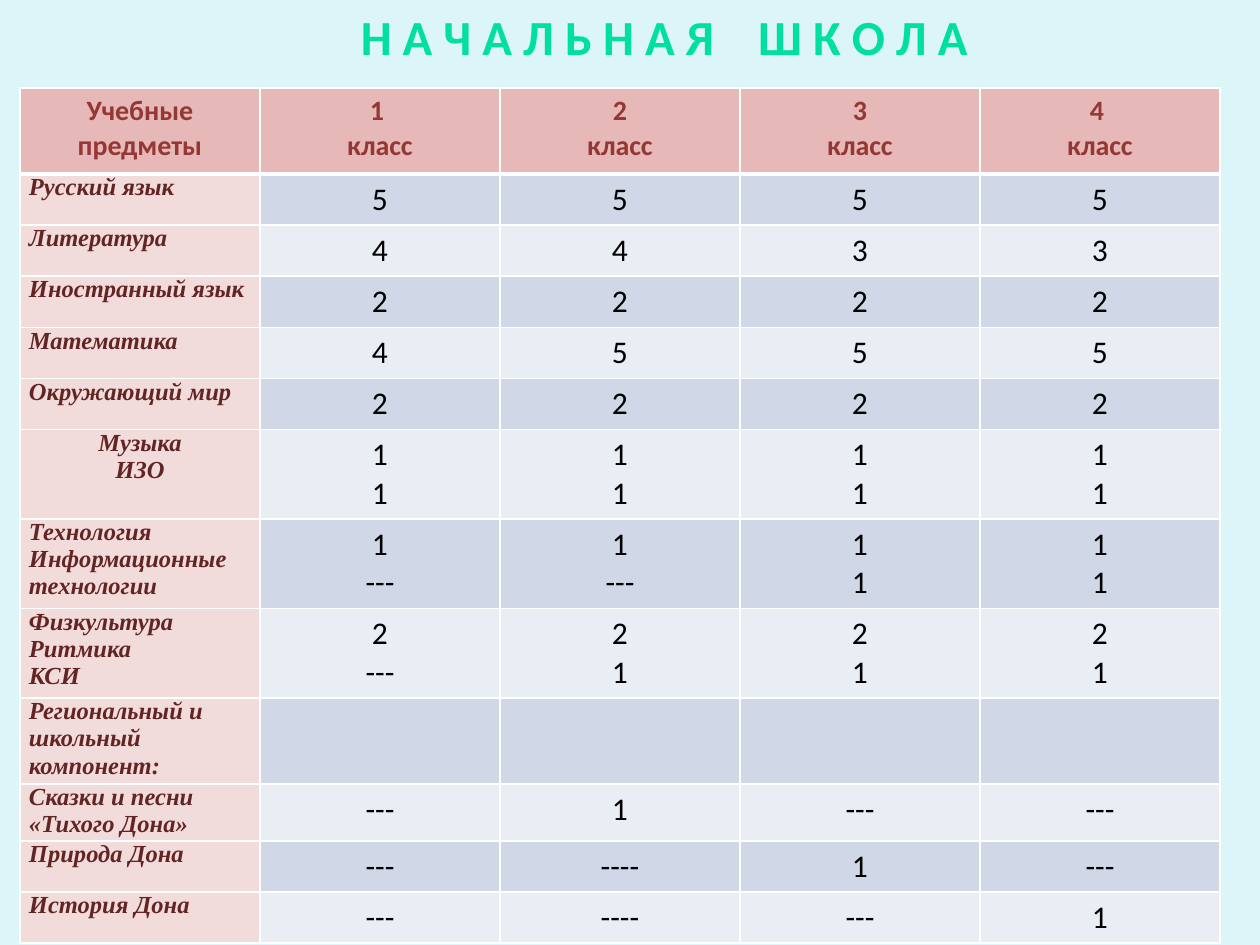
import pptx
import pptx.util
import pptx.dml.color
import pptx.enum.text
import pptx.oxml
import pptx.oxml.ns

RGB = pptx.dml.color.RGBColor
ALIGN = pptx.enum.text.PP_ALIGN
ANCHOR = pptx.enum.text.MSO_ANCHOR

BACKGROUND = RGB(0xDB, 0xF5, 0xF9)
TITLE_GREEN = RGB(0x00, 0xDF, 0xA2)
HEADER_FILL = RGB(0xE6, 0xB9, 0xB8)
HEADER_TEXT = RGB(0x95, 0x37, 0x35)
SUBJECT_FILL = RGB(0xF2, 0xDC, 0xDB)
SUBJECT_TEXT = RGB(0x63, 0x25, 0x23)
BANDS = RGB(0xD0, 0xD8, 0xE8), RGB(0xE9, 0xED, 0xF4)
BLACK = RGB(0, 0, 0)
WHITE = RGB(0xFF, 0xFF, 0xFF)

TITLE = "Н А Ч А Л Ь Н А Я    Ш К О Л А"
HEADER = ["Учебные предметы", "1 \nкласс", "2\nкласс", "3\nкласс", "4 \nкласс"]
# Row height in px, subject, hours in each of the four classes
SUBJECTS = [
    (49, "Русский язык", ["5", "5", "5", "5"]),
    (49, "Литература", ["4", "4", "3", "3"]),
    (49, "Иностранный язык", ["2", "2", "2", "2"]),
    (49, "Математика", ["4", "5", "5", "5"]),
    (49, "Окружающий мир", ["2", "2", "2", "2"]),
    (57, "Музыка\nИЗО", ["1\n1", "1\n1", "1\n1", "1\n1"]),
    (86, "Технология\nИнформационные технологии", ["1\n---", "1\n---", "1\n1", "1\n1"]),
    (86, "Физкультура\nРитмика\nКСИ", ["2\n---", "2\n1", "2\n1", "2\n1"]),
    (86, "Региональный и школьный компонент:", ["", "", "", ""]),
    (57, "Сказки и песни «Тихого Дона»", ["---", "1", "---", "---"]),
    (49, "Природа Дона", ["---", "----", "1", "---"]),
    (49, "История Дона", ["---", "----", "---", "1"]),
]
CENTRED_SUBJECT = "Музыка\nИЗО"
HEADER_HEIGHT = 86
COLUMN_WIDTH = 240


def px(length):
    return pptx.util.Emu(length * 914400 // 126)


def write(frame, text, size, color, face="Calibri", bold=False, italic=False,
          align=ALIGN.CENTER):
    frame.text = text
    for paragraph in frame.paragraphs:
        paragraph.alignment = align
        font = paragraph.font
        font.name, font.size = face, pptx.util.Pt(size)
        font.bold, font.italic = bold, italic
        font.color.rgb = color


def set_borders(cell, top=1, bottom=1):
    """Draw white borders, with widths in points, ahead of the cell's fill."""
    properties = cell._tc.get_or_add_tcPr()
    widths = {"lnL": 1, "lnR": 1, "lnT": top, "lnB": bottom}
    for position, (side, width) in enumerate(widths.items()):
        properties.insert(position, pptx.oxml.parse_xml(
            f'<a:{side} {pptx.oxml.ns.nsdecls("a")} w="{pptx.util.Pt(width)}">'
            f'<a:solidFill><a:srgbClr val="{WHITE}"/></a:solidFill></a:{side}>'))


def fill_cell(cell, color):
    cell.fill.solid()
    cell.fill.fore_color.rgb = color


def add_title(slide):
    title = slide.shapes.title
    title.left, title.top, title.width, title.height = map(px, (256, 0, 816, 72))
    write(title.text_frame, TITLE, 28, TITLE_GREEN, bold=True)
    title.text_frame.vertical_anchor = ANCHOR.TOP


def add_timetable(slide):
    heights = [HEADER_HEIGHT] + [height for height, _, _ in SUBJECTS]
    table = slide.shapes.add_table(
        len(heights), len(HEADER), px(20), px(88),
        px(COLUMN_WIDTH * len(HEADER)), px(sum(heights))).table
    for column in table.columns:
        column.width = px(COLUMN_WIDTH)
    for row, height in zip(table.rows, heights):
        row.height = px(height)

    for cell, text in zip(table.rows[0].cells, HEADER):
        write(cell.text_frame, text, 16, HEADER_TEXT, bold=True)
        fill_cell(cell, HEADER_FILL)
        set_borders(cell, bottom=3)

    for number, (_, subject, hours) in enumerate(SUBJECTS):
        subject_cell, *hour_cells = table.rows[number + 1].cells
        write(subject_cell.text_frame, subject, 14, SUBJECT_TEXT, "Times New Roman",
              bold=True, italic=True,
              align=ALIGN.CENTER if subject == CENTRED_SUBJECT else ALIGN.LEFT)
        subject_cell.margin_left = subject_cell.margin_right = px(9)
        subject_cell.margin_top = subject_cell.margin_bottom = 0
        fill_cell(subject_cell, SUBJECT_FILL)
        for cell, text in zip(hour_cells, hours):
            write(cell.text_frame, text, 18, BLACK)
            fill_cell(cell, BANDS[number % 2])
        for cell in (subject_cell, *hour_cells):
            set_borders(cell, top=3 if number == 0 else 1)


def main():
    deck = pptx.Presentation()
    deck.slide_width, deck.slide_height = px(1260), px(945)
    slide = deck.slides.add_slide(deck.slide_layouts[5])
    slide.background.fill.solid()
    slide.background.fill.fore_color.rgb = BACKGROUND
    add_title(slide)
    add_timetable(slide)
    deck.save("out.pptx")


if __name__ == "__main__":
    main()
